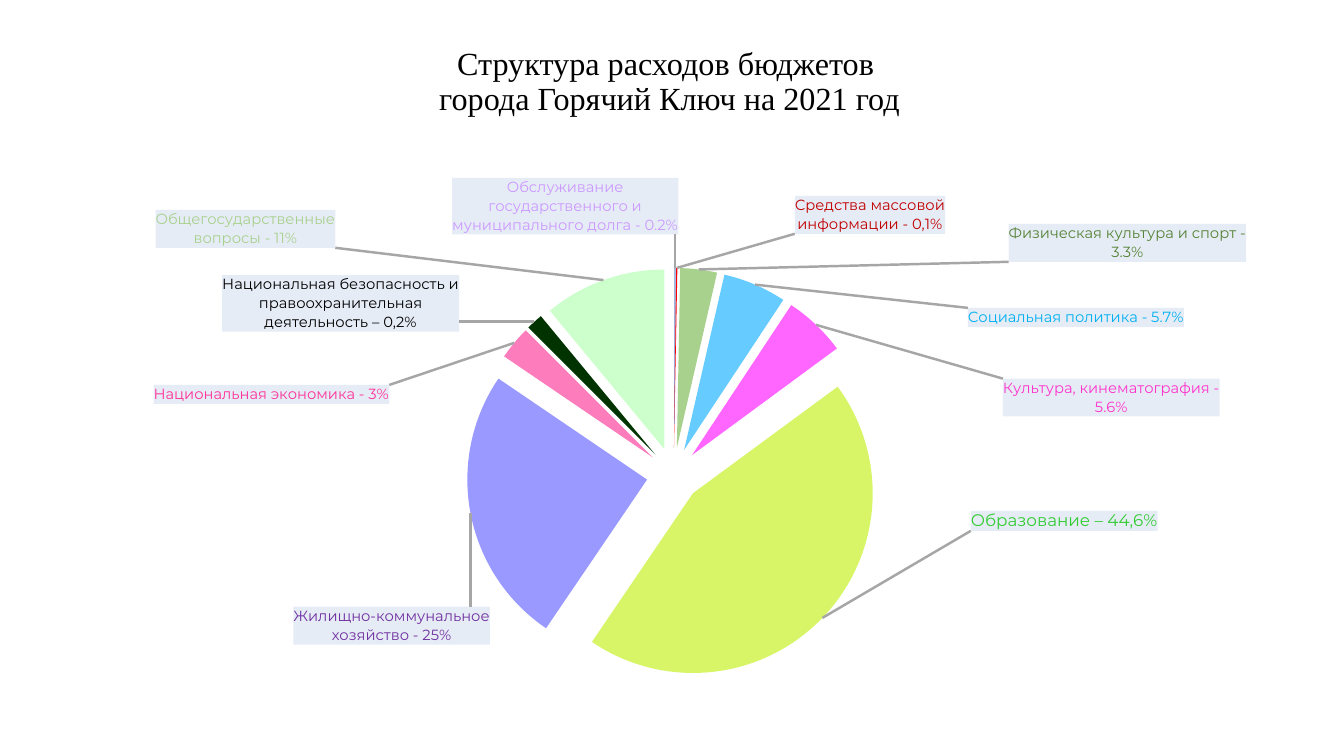
from math import cos, pi, sin

from pptx import Presentation
from pptx.chart.data import CategoryChartData
from pptx.dml.color import RGBColor
from pptx.enum.chart import XL_CHART_TYPE, XL_LABEL_POSITION
from pptx.enum.text import MSO_ANCHOR, MSO_AUTO_SIZE, PP_ALIGN
from pptx.oxml import parse_xml
from pptx.oxml.ns import nsdecls
from pptx.util import Pt

PIE = XL_CHART_TYPE.PIE
OUTSIDE_END = XL_LABEL_POSITION.OUTSIDE_END
CENTER = PP_ALIGN.CENTER
TITLE_ONLY = 5

COLORS = {
    "text": "000000", "label_fill": "E6ECF6", "leader": "A6A6A6",
    "debt_top": "A8B7DF", "debt_bottom": "889ED7",
}
NAMESPACES = nsdecls("c", "a")
CHART_LEFT, CHART_TOP, CHART_WIDTH, CHART_HEIGHT = 56.88, 126.72, 867.6, 401.76
PLOT = {"x": 0.11, "y": 0.161, "w": 0.758, "h": 0.735}
EXPLOSION = 15
LABEL_GAP = 4.25

# category, value, slice colour, label lines, label colour, label size,
# label box on the slide (left, top, width, height)
EXPENSES = [
    ("Обслуживание государственного и муниципального долга", 0.2, None,
     "Обслуживание\nгосударственного и\nмуниципального долга - 0.2%",
     "CC99FF", 10.5, (323, 127, 161.5, 40.5)),
    ("Средства массовой информации", 0.1, "FF0000",
     "Средства массовой\nинформации - 0,1%", "C00000", 10.5, (568, 140, 107, 27)),
    ("Физическая культура и спорт", 3.3, "A9D18E",
     "Физическая культура и спорт -\n3.3%", "548235", 10.5, (720.5, 160, 170, 27)),
    ("Социальная политика", 5.7, "66CCFF",
     "Социальная политика - 5.7%", "00B0F0", 10.5, (691.5, 220, 153.5, 13.5)),
    ("Культура, кинематография", 5.6, "FF66FF",
     "Культура, кинематография -\n5.6%", "FF33CC", 10.5, (716.5, 270.5, 154.5, 27)),
    ("Образование", 44.6, "D7F567",
     "Образование – 44,6%", "33CC33", 12, (693.5, 365, 133.5, 14.5)),
    ("Жилищно-коммунальное хозяйство", 25, "9999FF",
     "Жилищно-коммунальное\nхозяйство - 25%", "7030A0", 10.5, (210, 433.5, 140, 27)),
    ("Национальная экономика", 3, "FC7CBC",
     "Национальная экономика - 3%", "FF3399", 10.5, (110, 275, 168, 13.5)),
    ("Национальная безопасность и правоохранительная деятельность", 1.5, "003300",
     "Национальная безопасность и\nправоохранительная\nдеятельность – 0,2%",
     "000000", 10.5, (158.5, 196.5, 169.5, 40.5)),
    ("Общегосударственные вопросы", 11, "CCFFCC",
     "Общегосударственные\nвопросы - 11%", "A9D18E", 10.5, (111.5, 150, 128, 27)),
]


def rgb(value):
    return RGBColor.from_string(value)


def format_text(frame, name, size, color):
    for paragraph in frame.paragraphs:
        paragraph.alignment = CENTER
        for run in paragraph.runs:
            run.font.name = name
            run.font.size = Pt(size)
            run.font.color.rgb = rgb(color)


presentation = Presentation()
presentation.slide_width, presentation.slide_height = Pt(960), Pt(540)
slide = presentation.slides.add_slide(presentation.slide_layouts[TITLE_ONLY])

# Title
title = slide.shapes.title
title.left, title.top, title.width, title.height = Pt(230.5), Pt(11), Pt(496), Pt(76.5)
title_frame = title.text_frame
title_format = {
    "text": "Структура расходов бюджетов \vгорода Горячий Ключ на 2021 год",
    "vertical_anchor": MSO_ANCHOR.BOTTOM, "word_wrap": True, "auto_size": MSO_AUTO_SIZE.NONE,
}
for attribute, value in title_format.items():
    setattr(title_frame, attribute, value)
format_text(title_frame, "Times New Roman", 23, COLORS["text"])
title_frame.paragraphs[0].line_spacing = 0.9

# Pie chart
chart_data = CategoryChartData()
chart_data.categories = [expense[0] for expense in EXPENSES]
chart_data.add_series("Series 1", [expense[1] for expense in EXPENSES])
chart = slide.shapes.add_chart(
    PIE, Pt(CHART_LEFT), Pt(CHART_TOP), Pt(CHART_WIDTH), Pt(CHART_HEIGHT), chart_data).chart
chart.has_title = False
chart.has_legend = False
chart.font.name = "Calibri"
chart.font.size = Pt(10)
chart.font.color.rgb = rgb(COLORS["text"])
plot = chart.plots[0]
plot.vary_by_categories = True
series = plot.series[0]

# Place of the pie inside the chart
plot_area = plot._element.getparent()
for layout in plot_area.findall("{*}layout"):
    plot_area.remove(layout)
edges = "".join(f'<c:{key} val="{value}"/>' for key, value in PLOT.items())
plot_area.insert(0, parse_xml(
    f'<c:layout {NAMESPACES}><c:manualLayout><c:layoutTarget val="inner"/>'
    f'<c:xMode val="edge"/><c:yMode val="edge"/>{edges}</c:manualLayout></c:layout>'))
center_x = CHART_LEFT + (PLOT["x"] + PLOT["w"] / 2) * CHART_WIDTH
center_y = CHART_TOP + (PLOT["y"] + PLOT["h"] / 2) * CHART_HEIGHT
anchor_radius = PLOT["h"] * CHART_HEIGHT / 2 + LABEL_GAP

# Label defaults and leader lines
data_labels = series.data_labels
label_format = {"show_value": True, "show_category_name": True, "position": OUTSIDE_END}
for attribute, value in label_format.items():
    setattr(data_labels, attribute, value)
labels_element = data_labels._element
for leader_switch in labels_element.findall("{*}showLeaderLines"):
    labels_element.remove(leader_switch)
labels_element.append(parse_xml(f'<c:showLeaderLines {NAMESPACES} val="1"/>'))
labels_element.append(parse_xml(
    f'<c:leaderLines {NAMESPACES}><c:spPr><a:ln w="{Pt(1.75)}"><a:solidFill>'
    f'<a:srgbClr val="{COLORS["leader"]}"/></a:solidFill></a:ln></c:spPr></c:leaderLines>'))

# Slices and their labels
total = sum(expense[1] for expense in EXPENSES)
running = 0
for index, (_, value, color, text, text_color, size, box) in enumerate(EXPENSES):
    point = series.points[index]
    fill = point.format.fill
    if color:
        fill.solid()
        fill.fore_color.rgb = rgb(color)
    else:
        fill.gradient()
        fill.gradient_angle = 270
        for stop, key in zip(fill.gradient_stops, ("debt_top", "debt_bottom")):
            stop.color.rgb = rgb(COLORS[key])
    point.format.line.fill.background()

    label = point.data_label
    label.text_frame.text = text
    format_text(label.text_frame, "Montserrat", size, text_color)
    label.position = OUTSIDE_END

    # Shift from the default place beside the middle of the slice's arc
    angle = 2 * pi * (running + value / 2) / total
    running += value
    across, up = sin(angle), cos(angle)
    left, top, width, height = box
    default_left = center_x + anchor_radius * across
    default_top = center_y - anchor_radius * up
    if abs(across) < 0.087:
        default_left -= width / 2
    elif across < 0:
        default_left -= width
    if up > 0:
        default_top -= height
    shift_x = (left - default_left) / CHART_WIDTH
    shift_y = (top - default_top) / CHART_HEIGHT
    label_element = labels_element.findall("{*}dLbl")[index]
    label_element.find("{*}idx").addnext(parse_xml(
        f'<c:layout {NAMESPACES}><c:manualLayout><c:x val="{shift_x:.4f}"/>'
        f'<c:y val="{shift_y:.4f}"/></c:manualLayout></c:layout>'))
    for shape_format in label_element.findall("{*}spPr"):
        label_element.remove(shape_format)
    label_element.find("{*}tx").addnext(parse_xml(
        f'<c:spPr {NAMESPACES}><a:solidFill><a:srgbClr val="{COLORS["label_fill"]}"/>'
        '</a:solidFill><a:ln><a:noFill/></a:ln></c:spPr>'))
    label_element.find("{*}showCatName").set("val", "1")

# Pulled-out slices
series_element = series._element
explosion = f'<c:explosion {NAMESPACES} val="{EXPLOSION}"/>'
for slice_element in series_element.findall("{*}dPt"):
    slice_element.find("{*}spPr").addprevious(parse_xml(explosion))
series_element.find("{*}dPt").addprevious(parse_xml(explosion))

presentation.save("out.pptx")
